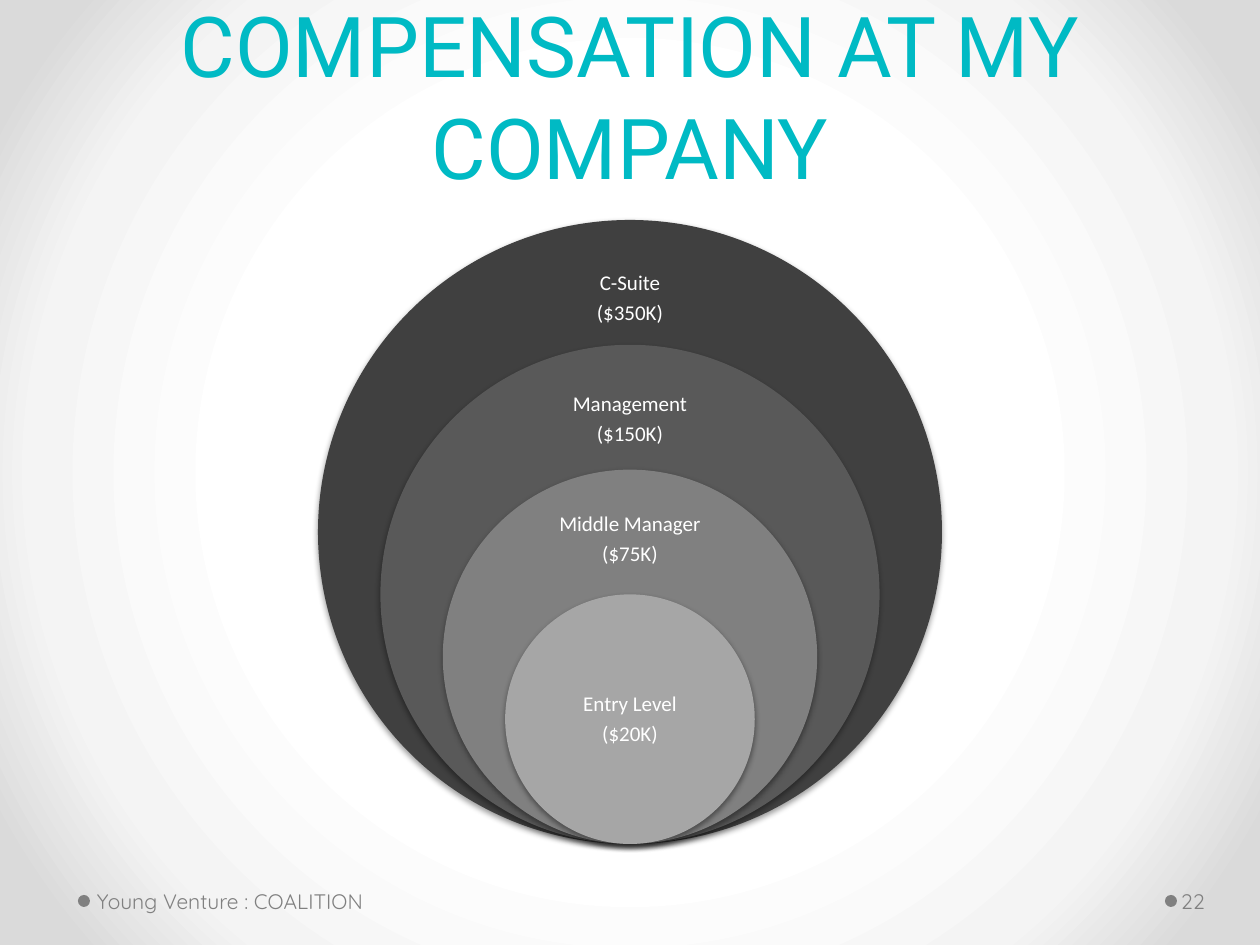
from pptx import Presentation
from pptx.dml.color import RGBColor
from pptx.enum.shapes import MSO_SHAPE
from pptx.enum.text import MSO_ANCHOR, MSO_AUTO_SIZE, PP_ALIGN
from pptx.oxml import parse_xml
from pptx.oxml.ns import nsdecls, qn
from pptx.util import Pt

EMU_PER_PX = 914400 / 126
COLORS = {
    "title": "00BAC4",
    "label": "FFFFFF",
    "footer": "808080",
    "shadow": "000000",
}
BACKGROUND_STOPS = [(50, "FFFFFF"), (76, "F4F4F4"), (92, "DADADA")]
LEVELS = [
    ("C-Suite", "($350K)", "404040", 299),
    ("Management", "($150K)", "595959", 420),
    ("Middle Manager", "($75K)", "808080", 540),
    ("Entry Level", "($20K)", "A6A6A6", 720),
]
TITLE_FORMAT = {"alignment": PP_ALIGN.CENTER, "line_spacing": Pt(58)}
LABEL_FORMAT = {
    "alignment": PP_ALIGN.CENTER,
    "line_spacing": 0.9,
    "space_after": Pt(4.2),
}
FOOTER_FORMAT = {"alignment": PP_ALIGN.LEFT}


def px(value):
    return round(value * EMU_PER_PX)


def set_attributes(target, values):
    for name, value in values.items():
        setattr(target, name, value)


def place(shape, box):
    set_attributes(shape, dict(zip(("left", "top", "width", "height"), map(px, box))))


def write_lines(shape, lines, paragraph_format, font, size, color, margins, anchor):
    frame = shape.text_frame
    sides = ("margin_left", "margin_top", "margin_right", "margin_bottom")
    set_attributes(frame, dict(zip(sides, map(px, margins))))
    set_attributes(frame, {
        "word_wrap": True,
        "auto_size": MSO_AUTO_SIZE.NONE,
        "vertical_anchor": anchor,
    })
    frame.text = "\n".join(lines)
    for paragraph in frame.paragraphs:
        set_attributes(paragraph, paragraph_format)
        for run in paragraph.runs:
            set_attributes(run.font, {"name": font, "size": Pt(size), "bold": False})
            run.font.color.rgb = RGBColor.from_string(color)


def add_text(slide, box, *text_format):
    shape = slide.shapes.add_textbox(*map(px, box))
    write_lines(shape, *text_format)


def add_circle(slide, box, color):
    circle = slide.shapes.add_shape(MSO_SHAPE.OVAL, *map(px, box))
    circle.fill.solid()
    circle.fill.fore_color.rgb = RGBColor.from_string(color)
    circle.line.fill.background()
    circle.shadow.inherit = False
    return circle


def add_soft_shadow(shape):
    effects = shape.element.spPr.find(qn("a:effectLst"))
    effects.append(parse_xml(
        f'<a:outerShdw {nsdecls("a")} blurRad="{Pt(3.1)}" dist="{Pt(1.6)}" '
        f'dir="5400000" rotWithShape="0"><a:srgbClr val="{COLORS["shadow"]}">'
        '<a:alpha val="38000"/></a:srgbClr></a:outerShdw>'
    ))


def set_background(slide):
    slide.background.fill.solid()
    solid = slide.element.find(".//" + qn("p:bgPr")).find(qn("a:solidFill"))
    stops = "".join(
        f'<a:gs pos="{position * 1000}"><a:srgbClr val="{color}"/></a:gs>'
        for position, color in BACKGROUND_STOPS
    )
    gradient = parse_xml(
        f'<a:gradFill {nsdecls("a")} rotWithShape="1"><a:gsLst>{stops}</a:gsLst>'
        '<a:path path="circle"><a:fillToRect l="50000" t="50000" r="50000" '
        'b="50000"/></a:path></a:gradFill>'
    )
    solid.getparent().replace(solid, gradient)


def add_title(slide, box):
    title = slide.shapes.title
    place(title, box)
    write_lines(title, ["COMPENSATION AT MY COMPANY"], TITLE_FORMAT, "Roboto", 48,
                COLORS["title"], (13, 6, 13, 6), MSO_ANCHOR.BOTTOM)


def add_nested_circles(slide, box):
    left, top, width, height = box
    label_width, label_height = 190, 70
    center = left + width / 2
    for index, (name, pay, color, label_center) in enumerate(LEVELS):
        diameter = width * (1 - index / 5)
        circle_box = (center - diameter / 2, top + height - diameter, diameter, diameter)
        circle = add_circle(slide, circle_box, color)
        add_soft_shadow(circle)
        label_box = (center - label_width / 2, label_center - label_height / 2,
                     label_width, label_height)
        add_text(slide, label_box, [name, pay], LABEL_FORMAT, "Calibri", 12,
                 COLORS["label"], (0, 0, 0, 0), MSO_ANCHOR.MIDDLE)


def add_footer_item(slide, box, text, dot_left, margin_left):
    top, height = box[1], box[3]
    dot = 12
    add_circle(slide, (dot_left, top + (height - dot) / 2, dot, dot), COLORS["footer"])
    add_text(slide, box, [text], FOOTER_FORMAT, "Quicksand", 12, COLORS["footer"],
             (margin_left, 6, 6, 6), MSO_ANCHOR.MIDDLE)


def main():
    presentation = Presentation()
    presentation.slide_width = px(1260)
    presentation.slide_height = px(945)
    slide = presentation.slides.add_slide(presentation.slide_layouts[5])
    set_background(slide)
    add_title(slide, (63, 19, 1134, 183))
    add_nested_circles(slide, (318, 220, 624, 624))
    add_footer_item(slide, (91, 876, 392, 50), "Young Venture : COALITION", 78, 6)
    add_footer_item(slide, (1177, 876, 77, 50), "22", 1165, 4)
    presentation.save("out.pptx")


if __name__ == "__main__":
    main()
